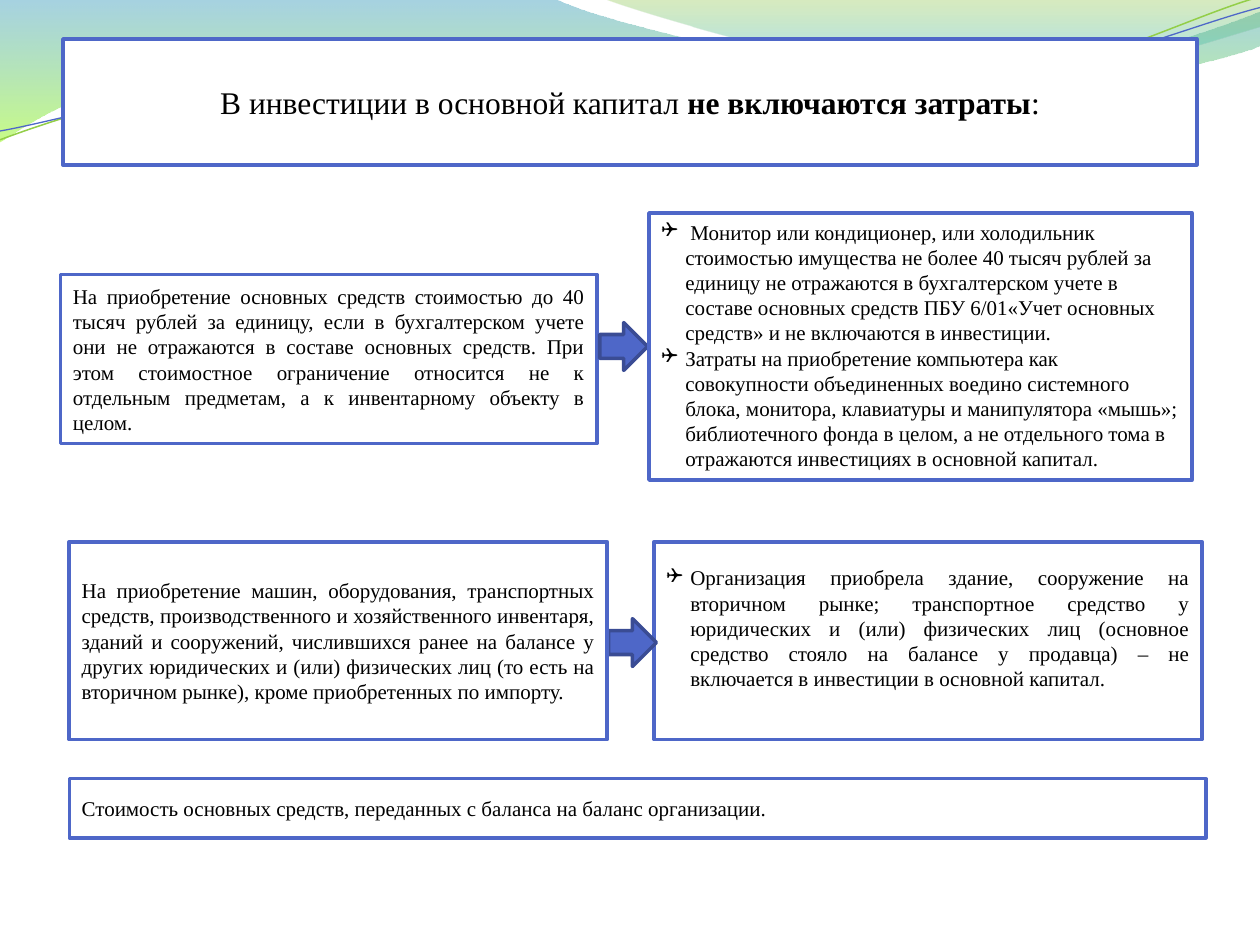
from dataclasses import dataclass

from lxml import etree
from pptx import Presentation
from pptx.dml.color import RGBColor
from pptx.enum.shapes import MSO_SHAPE
from pptx.enum.text import MSO_ANCHOR, MSO_AUTO_SIZE, PP_ALIGN
from pptx.oxml.ns import qn
from pptx.util import Inches, Pt

RECTANGLE, RIGHT_ARROW = MSO_SHAPE.RECTANGLE, MSO_SHAPE.RIGHT_ARROW
TOP, MIDDLE = MSO_ANCHOR.TOP, MSO_ANCHOR.MIDDLE
LEFT, CENTER, JUSTIFY = PP_ALIGN.LEFT, PP_ALIGN.CENTER, PP_ALIGN.JUSTIFY
FIT_SHAPE = MSO_AUTO_SIZE.SHAPE_TO_FIT_TEXT


@dataclass(frozen=True)
class Theme:
    font: str = "Times New Roman"
    bullet_font: str = "Wingdings"
    title_size: int = 18
    body_size: int = 12
    text: str = "000000"
    paper: str = "FFFFFF"
    accent: str = "4E67C8"
    accent_dark: str = "3A4C94"
    green: str = "93CE48"
    border: float = 2
    bullet: str = "❑"
    indent: float = 0.19
    # Gradient stops: position, colour, opacity in percent
    left_wave: tuple = ((0, "3B9CBF", 45), (1, "9CFA24", 55))
    right_wave: tuple = ((0, "7EBE2C", 30), (0.8, "39C1F1", 45))


class SlideBuilder:
    def __init__(self, slide, theme):
        self.slide = slide
        self.theme = theme

    def paint(self, shape, fill, line, width):
        shape.shadow.inherit = False
        shape.fill.solid()
        shape.fill.fore_color.rgb = RGBColor.from_string(fill)
        shape.line.color.rgb = RGBColor.from_string(line)
        shape.line.width = Pt(width)

    def outline(self, start, segments, close):
        """Draw segments: 2 numbers make a line, 6 make a cubic Bézier curve."""
        builder = self.slide.shapes.build_freeform(*map(Inches, start))
        for segment in segments:
            lengths = list(map(Inches, segment))
            builder.add_line_segments(zip(lengths[::2], lengths[1::2]), close=False)
        if close:
            builder.add_line_segments([], close=True)
        shape = builder.convert_to_shape()
        shape.shadow.inherit = False

        corners = iter(list(shape._element.spPr.iter(qn("a:lnTo"))))
        for segment in segments:
            group = [next(corners) for _ in segment[::2]]
            if len(group) == 3:
                curve = etree.Element(qn("a:cubicBezTo"))
                group[0].addprevious(curve)
                for corner in group:
                    curve.append(corner[0])
                    corner.getparent().remove(corner)
        return shape

    def wave(self, start, segments, stops):
        shape = self.outline(start, segments, True)
        shape.line.fill.background()
        shape.fill.gradient()
        shape.fill.gradient_angle = 270
        for stop, (position, color, _) in zip(shape.fill.gradient_stops, stops):
            stop.position = position
            stop.color.rgb = RGBColor.from_string(color)
        colors = shape._element.spPr.iter(qn("a:srgbClr"))
        for color, (_, _, opacity) in zip(list(colors), stops):
            etree.SubElement(color, qn("a:alpha"), val=str(opacity * 1000))

    def strand(self, start, segments, color, width):
        shape = self.outline(start, segments, False)
        shape.fill.background()
        shape.line.color.rgb = RGBColor.from_string(color)
        shape.line.width = Pt(width)

    def arrow(self, left, top, size=0.38):
        shape = self.slide.shapes.add_shape(
            RIGHT_ARROW, *map(Inches, (left, top, size, size)))
        self.paint(shape, self.theme.accent, self.theme.accent_dark, self.theme.border)

    def box(self, bounds, paragraphs, size=None, align=JUSTIFY, bulleted=False, **frame_format):
        """Add a framed text; each paragraph is a list of (text, bold) runs."""
        theme = self.theme
        shape = self.slide.shapes.add_shape(RECTANGLE, *map(Inches, bounds))
        self.paint(shape, theme.paper, theme.accent, theme.border)
        frame = shape.text_frame
        frame_values = {"word_wrap": True, "vertical_anchor": MIDDLE, **frame_format}
        for name, value in frame_values.items():
            setattr(frame, name, value)
        for index, runs in enumerate(paragraphs):
            paragraph = frame.add_paragraph() if index else frame.paragraphs[0]
            paragraph.alignment = align
            if bulleted:
                self.bullet(paragraph)
            for text, bold in runs:
                run = paragraph.add_run()
                run.text = text
                font_values = {"name": theme.font, "size": Pt(size or theme.body_size),
                               "bold": bold}
                for name, value in font_values.items():
                    setattr(run.font, name, value)
                run.font.color.rgb = RGBColor.from_string(theme.text)

    def bullet(self, paragraph):
        properties = paragraph._p.get_or_add_pPr()
        indent = Inches(self.theme.indent)
        properties.set("marL", str(indent))
        properties.set("indent", str(-indent))
        etree.SubElement(properties, qn("a:buFont"), typeface=self.theme.bullet_font)
        etree.SubElement(properties, qn("a:buChar"), char=self.theme.bullet)


def add_waves(builder):
    theme = builder.theme
    builder.wave((0, 0), [
        (4.4, -0.01), (4.76, 0.17, 6.64, 0.63, 7.58, 0.63),
        (8.53, 0.63, 9.58, 0.26, 10, 0.09), (10.01, 0.36),
        (9.83, 0.44, 8.7, 0.76, 7.46, 0.75), (6.22, 0.75, 3.82, 0.28, 2.57, 0.34),
        (1.29, 0.36, 0.46, 0.83, -0.01, 1.13)], theme.left_wave)
    builder.wave((4.79, -0.01), [
        (5.09, 0.11, 6.82, 0.62, 7.69, 0.65), (8.56, 0.69, 9.61, 0.32, 10, 0.21),
        (10, 0)], theme.right_wave)
    builder.strand((0, 1.11), [
        (0.48, 0.93, 1.58, 0.57, 2.77, 0.52), (3.95, 0.47, 5.93, 0.89, 7.13, 0.8),
        (8.33, 0.71, 9.38, 0.15, 9.98, -0.02)], theme.green, 0.85)
    builder.strand((0, 1.04), [
        (0.47, 0.96, 1.64, 0.61, 2.83, 0.56), (4.03, 0.51, 5.97, 0.84, 7.17, 0.75),
        (8.36, 0.67, 9.41, 0.21, 10, 0.06)], theme.accent, 0.75)


def add_content(builder):
    builder.box((0.5, 0.31, 9, 1), [[
        ("В инвестиции в основной капитал ", False),
        ("не включаются затраты", True), (":", False)]],
        size=builder.theme.title_size, align=CENTER)

    second_row_top, second_row_height = 4.3, 1.57
    builder.box((5.19, second_row_top, 4.35, second_row_height), [[(
        "Организация приобрела здание, сооружение на вторичном рынке; транспортное "
        "средство у юридических и (или) физических лиц (основное средство стояло на "
        "балансе у продавца) – не включается в инвестиции в основной капитал.", False)]],
        bulleted=True, margin_bottom=Inches(0.25))
    builder.box((0.48, 2.18, 4.26, 1.34), [[(
        "На приобретение основных средств стоимостью до 40 тысяч рублей за единицу, "
        "если в бухгалтерском учете они не отражаются в составе основных средств. При "
        "этом стоимостное ограничение относится не к отдельным предметам, а к "
        "инвентарному объекту в целом.", False)]])
    builder.arrow(4.76, 2.56)
    builder.arrow(4.83, 4.91)
    builder.box((5.15, 1.69, 4.31, 2.12), [
        [(" Монитор или кондиционер, или холодильник стоимостью имущества не более 40 "
          "тысяч рублей за единицу не отражаются в бухгалтерском учете в составе "
          "основных средств ПБУ 6/01«Учет основных средств» и не включаются в "
          "инвестиции.", False)],
        [("Затраты на приобретение компьютера как совокупности объединенных воедино "
          "системного блока, монитора, клавиатуры и манипулятора «мышь»; библиотечного "
          "фонда в целом, а не отдельного тома в отражаются инвестициях в основной "
          "капитал.", False)]],
        align=LEFT, bulleted=True, vertical_anchor=TOP, auto_size=FIT_SHAPE)
    builder.box((0.55, second_row_top, 4.27, second_row_height), [[(
        "На приобретение машин, оборудования, транспортных средств, производственного "
        "и хозяйственного инвентаря, зданий и сооружений, числившихся ранее на балансе "
        "у других юридических и (или) физических лиц (то есть на вторичном рынке), "
        "кроме приобретенных по импорту.", False)]])
    builder.box((0.55, 6.18, 9.02, 0.47), [[(
        "Стоимость основных средств, переданных с баланса на баланс организации.", False)]])


def main():
    presentation = Presentation()
    presentation.slide_width, presentation.slide_height = Inches(10), Inches(7.5)
    blank_layout = presentation.slide_layouts[6]
    builder = SlideBuilder(presentation.slides.add_slide(blank_layout), Theme())
    add_waves(builder)
    add_content(builder)
    presentation.save("out.pptx")


if __name__ == "__main__":
    main()
